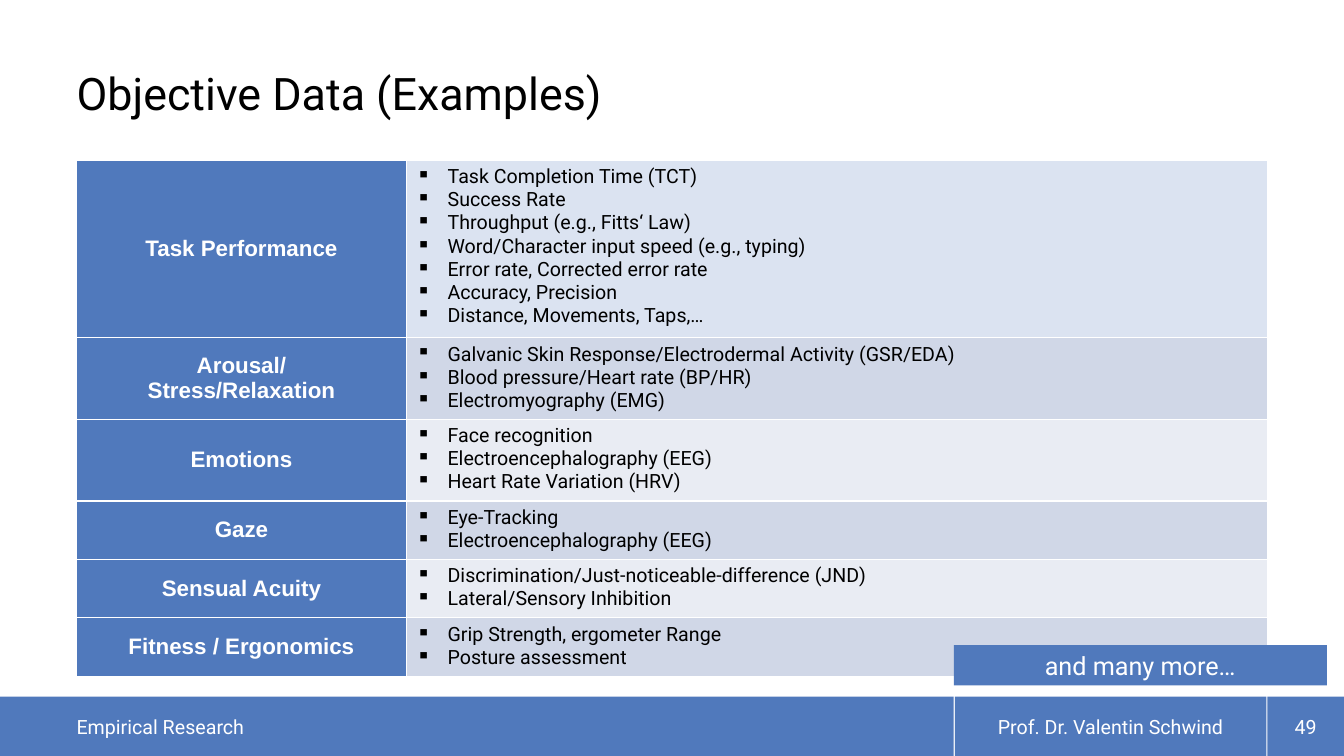
from lxml import etree
from pptx import Presentation
from pptx import util as u
from pptx.dml.color import RGBColor
from pptx.enum import shapes, text
from pptx.oxml import ns

PX = 9144
BLUE = RGBColor(0x50, 0x79, 0xBC)
WHITE = RGBColor(0xFF, 0xFF, 0xFF)
BLACK = RGBColor(0, 0, 0)
FIRST_BAND = RGBColor(0xDB, 0xE3, 0xF1)
DARK_BAND = RGBColor(0xD0, 0xD7, 0xE7)
LIGHT_BAND = RGBColor(0xE9, 0xEC, 0xF3)

COLUMN_WIDTHS = (327, 854)
MEASURES = [
    (176, FIRST_BAND, ["Task Performance"], [
        "Task Completion Time (TCT)",
        "Success Rate",
        "Throughput (e.g., Fitts‘ Law)",
        "Word/Character input speed (e.g., typing)",
        "Error rate, Corrected error rate",
        "Accuracy, Precision",
        "Distance, Movements, Taps,…",
    ]),
    (81, DARK_BAND, ["Arousal/", "Stress/Relaxation"], [
        "Galvanic Skin Response/Electrodermal Activity (GSR/EDA)",
        "Blood pressure/Heart rate (BP/HR)",
        "Electromyography (EMG)",
    ]),
    (81, LIGHT_BAND, ["Emotions"], [
        "Face recognition",
        "Electroencephalography (EEG)",
        "Heart Rate Variation (HRV)",
    ]),
    (58, DARK_BAND, ["Gaze"], [
        "Eye-Tracking",
        "Electroencephalography (EEG)",
    ]),
    (58, LIGHT_BAND, ["Sensual Acuity"], [
        "Discrimination/Just-noticeable-difference (JND)",
        "Lateral/Sensory Inhibition",
    ]),
    (58, DARK_BAND, ["Fitness / Ergonomics"], [
        "Grip Strength, ergometer Range",
        "Posture assessment",
    ]),
]


def px(*lengths):
    return [u.Emu(length * PX) for length in lengths]


def add_bullet(paragraph):
    properties = paragraph._p.get_or_add_pPr()
    properties.set("marL", str(31 * PX))
    properties.set("indent", str(-31 * PX))
    etree.SubElement(properties, ns.qn("a:buChar"), char="▪")


def write_lines(frame, lines, size, color, font="Roboto", bold=False,
                align=text.PP_ALIGN.LEFT, bullets=False):
    for index, line in enumerate(lines):
        paragraph = frame.paragraphs[0] if index == 0 else frame.add_paragraph()
        paragraph.alignment = align
        if bullets:
            add_bullet(paragraph)
        run = paragraph.add_run()
        run.text = line
        run.font.name = font
        run.font.size = u.Pt(size)
        run.font.bold = bold
        run.font.color.rgb = color


def add_bar(slide, left, top, width, height):
    shape = slide.shapes.add_shape(shapes.MSO_SHAPE.RECTANGLE,
                                   *px(left, top, width, height))
    shape.shadow.inherit = False
    shape.fill.solid()
    shape.fill.fore_color.rgb = BLUE
    shape.line.fill.background()
    return shape


def add_label(slide, box, line, size, color, align=text.PP_ALIGN.LEFT,
              anchor=text.MSO_ANCHOR.MIDDLE):
    frame = slide.shapes.add_textbox(*px(*box)).text_frame
    frame.word_wrap = True
    frame.margin_left = frame.margin_right = 0
    frame.margin_top = frame.margin_bottom = 0
    frame.vertical_anchor = anchor
    write_lines(frame, [line], size, color, align=align)
    return frame


def style_cell(cell, color):
    cell.fill.solid()
    cell.fill.fore_color.rgb = color
    properties = cell._tc.get_or_add_tcPr()
    for index, side in enumerate(("lnL", "lnR", "lnT", "lnB")):
        border = etree.Element(ns.qn(f"a:{side}"), w=str(u.Pt(1)))
        fill = etree.SubElement(border, ns.qn("a:solidFill"))
        etree.SubElement(fill, ns.qn("a:srgbClr"), val=str(WHITE))
        properties.insert(index, border)


def add_measure_table(slide):
    heights = [measure[0] for measure in MEASURES]
    table = slide.shapes.add_table(
        len(MEASURES), len(COLUMN_WIDTHS),
        *px(76, 159, sum(COLUMN_WIDTHS), sum(heights))).table
    table.first_row = table.horz_banding = False
    for column, width in zip(table.columns, px(*COLUMN_WIDTHS)):
        column.width = width
    for row, (height, band, heading, examples) in zip(table.rows, MEASURES):
        row.height = u.Emu(height * PX)
        heading_cell, example_cell = row.cells
        style_cell(heading_cell, BLUE)
        heading_cell.vertical_anchor = text.MSO_ANCHOR.MIDDLE
        write_lines(heading_cell.text_frame, heading, 16, WHITE, font="Arial",
                    bold=True, align=text.PP_ALIGN.CENTER)
        style_cell(example_cell, band)
        write_lines(example_cell.text_frame, examples, 14, BLACK, bullets=True)


def add_footer(slide):
    for left, width in ((947, 309), (0, 946), (1257, 76)):
        add_bar(slide, left, 691, width, 59)
    center = text.PP_ALIGN.CENTER
    add_label(slide, (946, 691, 311, 59), "Prof. Dr. Valentin Schwind", 14,
              WHITE, center)
    add_label(slide, (1257, 691, 76, 59), "49", 14, WHITE, center)
    add_label(slide, (76, 691, 870, 59), "Empirical Research", 14, WHITE)


def main():
    presentation = Presentation()
    presentation.slide_width, presentation.slide_height = px(1333, 750)
    slide = presentation.slides.add_slide(presentation.slide_layouts[6])
    add_footer(slide)
    title = add_label(slide, (76, 13, 1181, 106), "Objective Data (Examples)",
                      32, BLACK, anchor=text.MSO_ANCHOR.BOTTOM)
    title.paragraphs[0].line_spacing = 0.9
    add_measure_table(slide)
    more = add_bar(slide, 946, 640, 370, 40)
    write_lines(more.text_frame, ["and many more…"], 18, WHITE,
                align=text.PP_ALIGN.CENTER)
    presentation.save("out.pptx")


if __name__ == "__main__":
    main()
